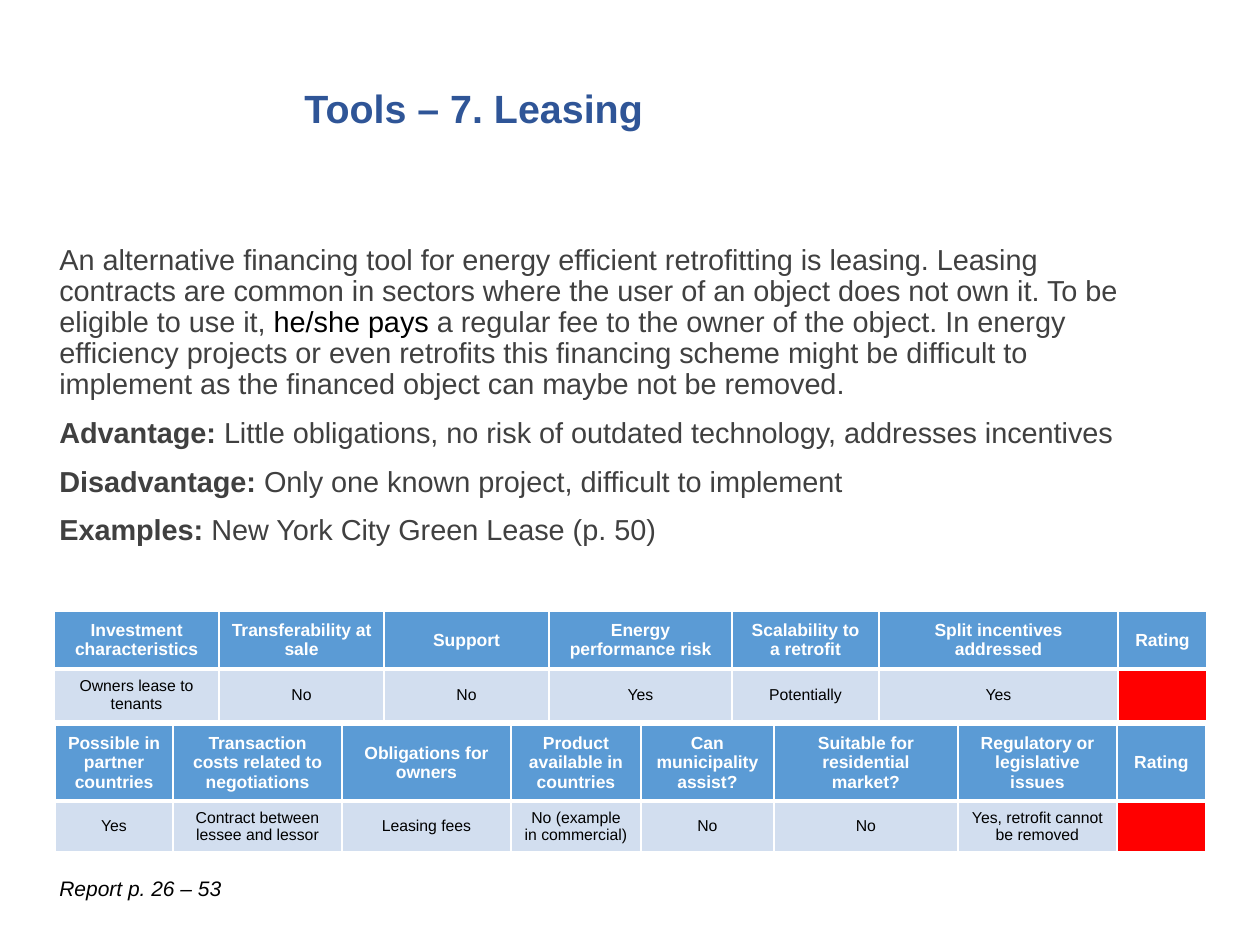
from lxml import etree
from pptx import Presentation
from pptx import util as u
from pptx.dml.color import RGBColor
from pptx.enum import text
from pptx.oxml import ns

PX = u.Inches(1) / 126
FONT = "Arial"
WHITE = RGBColor(0xFF, 0xFF, 0xFF)
BLACK = RGBColor(0, 0, 0)
GRAY = RGBColor(0x40, 0x40, 0x40)
NAVY = RGBColor(0x2F, 0x55, 0x97)
BLUE = RGBColor(0x5B, 0x9B, 0xD5)
PALE = RGBColor(0xD2, 0xDE, 0xEF)
RED = RGBColor(0xFF, 0, 0)

INTRO = [
    ("An alternative financing tool for energy efficient retrofitting is leasing. "
     "Leasing contracts are common in sectors where the user of an object does not "
     "own it. To be eligible to use it, ", GRAY),
    ("he/she pays ", BLACK),
    ("a regular fee to the owner of the object. In energy efficiency projects or "
     "even retrofits this financing scheme might be difficult to implement as the "
     "financed object can maybe not be removed.", GRAY),
]
POINTS = [
    ("Advantage:", " Little obligations, no risk of outdated technology, addresses incentives"),
    ("Disadvantage:", " Only one known project, difficult to implement"),
    ("Examples:", " New York City Green Lease (p. 50)"),
]
FIRST = [
    (165, "Investment characteristics", "Owners lease to tenants"),
    (165, "Transferability at sale", "No"),
    (165, "Support", "No"),
    (183, "Energy performance risk", "Yes"),
    (147, "Scalability to a retrofit", "Potentially"),
    (239, "Split incentives addressed", "Yes"),
    (89, "Rating", ""),
]
SECOND = [
    (118, "Possible in partner countries", "Yes"),
    (169, "Transaction costs related to negotiations", "Contract between lessee and lessor"),
    (169, "Obligations for owners", "Leasing fees"),
    (130, "Product available in countries", "No (example in commercial)"),
    (133, "Can municipality assist?", "No"),
    (184, "Suitable for residential market?", "No"),
    (159, "Regulatory or legislative issues", "Yes, retrofit cannot be removed"),
    (89, "Rating", ""),
]


def px(n):
    return u.Emu(round(n * PX))


def style(para, size, color, bold=False, italic=False):
    font = para.font
    font.name, font.size, font.color.rgb = FONT, u.Pt(size), color
    font.bold, font.italic = bold, italic


def frame(slide, box):
    body = slide.shapes.add_textbox(*map(px, box)).text_frame
    body.word_wrap = True
    return body


def title(slide, box):
    body = frame(slide, box)
    body.vertical_anchor = text.MSO_ANCHOR.MIDDLE
    para = body.paragraphs[0]
    para.text = "Tools – 7. Leasing"
    para.line_spacing = 0.9
    style(para, 22.5, NAVY, bold=True)


def prose(slide, box):
    body = frame(slide, box)
    para = body.paragraphs[0]
    para.line_spacing = 0.9
    style(para, 16.5, GRAY)
    for words, color in INTRO:
        run = para.add_run()
        run.text = words
        run.font.color.rgb = color
    for label, words in POINTS:
        para = body.add_paragraph()
        para.line_spacing = 0.9
        para.space_before = u.Pt(10)
        style(para, 16.5, GRAY)
        run = para.add_run()
        run.text = label
        run.font.bold = True
        para.add_run().text = words


def source(slide, box):
    para = frame(slide, box).paragraphs[0]
    para.text = "Report p. 26 – 53"
    style(para, 12, BLACK, italic=True)


def border(cell, sides):
    props = cell._tc.get_or_add_tcPr()
    for side, width in sides.items():
        line = etree.SubElement(props, ns.qn("a:ln" + side), w=str(u.Pt(width)))
        fill = etree.SubElement(line, ns.qn("a:solidFill"))
        etree.SubElement(fill, ns.qn("a:srgbClr"), val=str(WHITE))


def fill_cell(cell, words, head):
    border(cell, {"L": 1, "R": 1, "T": 1 if head else 3, "B": 3 if head else 1})
    cell.fill.solid()
    cell.fill.fore_color.rgb = BLUE if head else PALE if words else RED
    cell.vertical_anchor = text.MSO_ANCHOR.MIDDLE
    para = cell.text_frame.paragraphs[0]
    para.text = words
    para.alignment = text.PP_ALIGN.CENTER
    style(para, 10 if head else 9, WHITE if head else BLACK, bold=head)


def rating(slide, left, top, heights, cols):
    width = sum(col[0] for col in cols)
    box = map(px, (left, top, width, sum(heights)))
    grid = slide.shapes.add_table(2, len(cols), *box).table
    for row, high in zip(grid.rows, heights):
        row.height = px(high)
    for i, (wide, head, value) in enumerate(cols):
        grid.columns[i].width = px(wide)
        fill_cell(grid.cell(0, i), head, True)
        fill_cell(grid.cell(1, i), value, False)


def main():
    deck = Presentation()
    deck.slide_width, deck.slide_height = px(1260), px(945)
    slide = deck.slides.add_slide(deck.slide_layouts[6])
    prose(slide, (47, 239, 1126, 542))
    title(slide, (292, 76, 791, 70))
    source(slide, (47, 869, 292, 38))
    rating(slide, 54, 611, (58, 52), FIRST)
    rating(slide, 55, 725, (76, 51), SECOND)
    deck.save("out.pptx")


if __name__ == "__main__":
    main()
